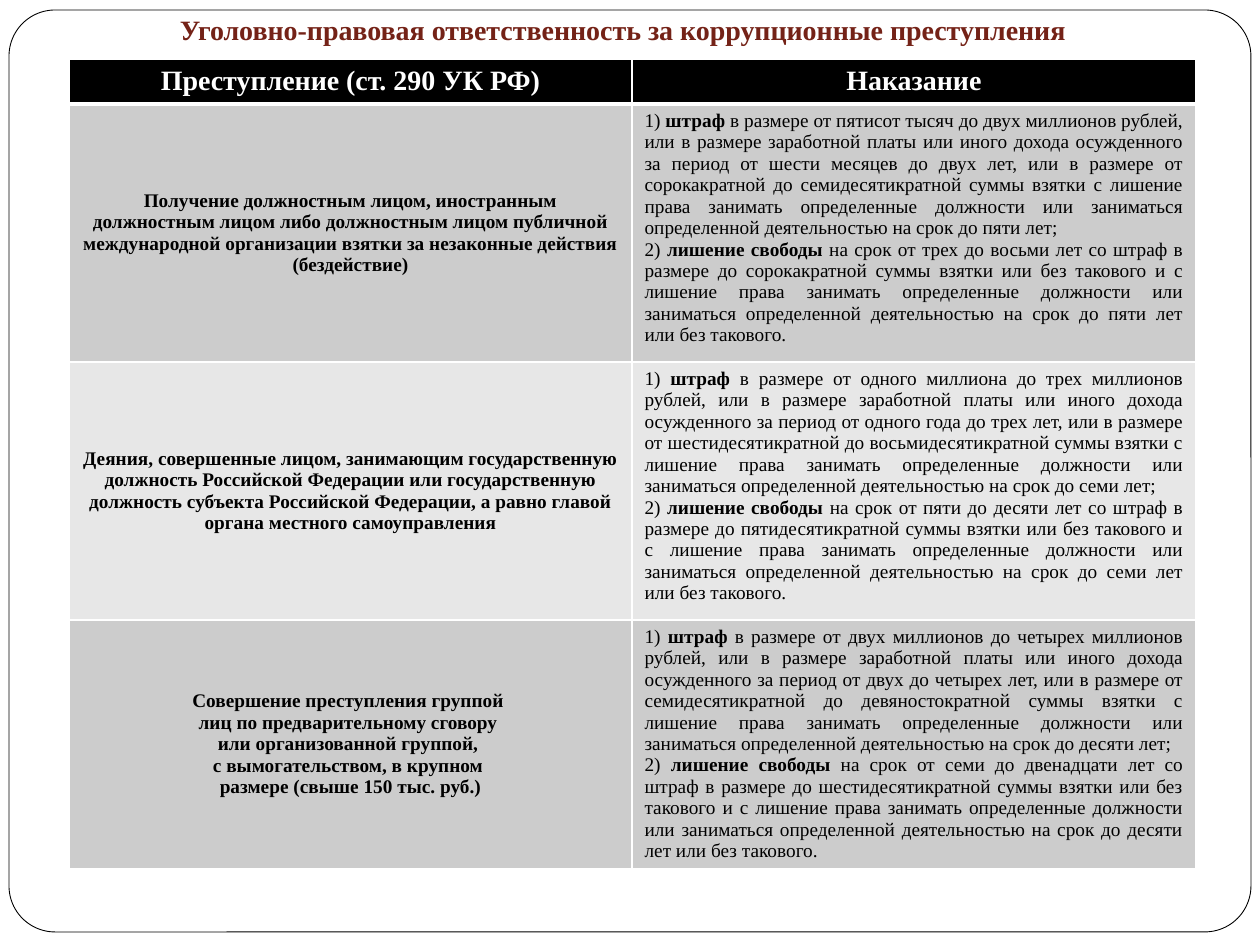
"""Build a slide with a table of bribery offences and their punishments."""
from dataclasses import dataclass

import lxml.etree
import pptx
import pptx.dml.color
import pptx.enum.shapes
import pptx.enum.text
import pptx.oxml.ns
import pptx.util

BLACK = pptx.dml.color.RGBColor(0x00, 0x00, 0x00)
WHITE = pptx.dml.color.RGBColor(0xFF, 0xFF, 0xFF)
MAROON = pptx.dml.color.RGBColor(0x74, 0x22, 0x17)
DARK = pptx.dml.color.RGBColor(0xCC, 0xCC, 0xCC)
LIGHT = pptx.dml.color.RGBColor(0xE7, 0xE7, 0xE7)
FONT = "Times New Roman"
SCALE = 914400 / 126
ALIGN = pptx.enum.text.PP_ALIGN
ANCHOR = pptx.enum.text.MSO_ANCHOR
TITLE = "Уголовно-правовая ответственность за коррупционные преступления"
HEADS = ["Преступление (ст. 290 УК РФ)", "Наказание"]
WIDTHS = [563, 564]
HEIGHTS = [45, 258, 258, 248]


@dataclass
class Crime:
    """An offence, its two punishments and how many are auto-numbered."""
    act: str
    fine: str
    jail: str
    auto: int
    fill: pptx.dml.color.RGBColor


CRIMES = [
    Crime(
        "Получение должностным лицом, иностранным должностным лицом либо должностным лицом "
        "публичной международной организации взятки за незаконные действия (бездействие)",
        " в размере от пятисот тысяч до двух миллионов рублей, или в размере заработной платы "
        "или иного дохода осужденного за период от шести месяцев до двух лет, или в размере от "
        "сорокакратной до семидесятикратной суммы взятки с лишение права занимать определенные "
        "должности или заниматься определенной деятельностью на срок до пяти лет; ",
        " на срок от трех до восьми лет со штраф в размере до сорокакратной суммы взятки или без "
        "такового и с лишение права занимать определенные должности или заниматься определенной "
        "деятельностью на срок до пяти лет или без такового.",
        1, DARK),
    Crime(
        "Деяния, совершенные лицом, занимающим государственную должность Российской Федерации "
        "или государственную должность субъекта Российской Федерации, а равно главой органа "
        "местного самоуправления",
        " в размере от одного миллиона до трех миллионов рублей, или в размере заработной платы "
        "или иного дохода осужденного за период от одного года до трех лет, или в размере от "
        "шестидесятикратной до восьмидесятикратной суммы взятки с лишение права занимать "
        "определенные должности или заниматься определенной деятельностью на срок до семи лет; ",
        " на срок от пяти до десяти лет со штраф в размере до пятидесятикратной суммы взятки или "
        "без такового и с лишение права занимать определенные должности или заниматься "
        "определенной деятельностью на срок до семи лет или без такового.",
        2, LIGHT),
    Crime(
        "Совершение преступления группой \nлиц по предварительному сговору \n"
        "или организованной группой, \nс вымогательством, в крупном \n"
        "размере (свыше 150 тыс. руб.)",
        " в размере от двух миллионов до четырех миллионов рублей, или в размере заработной платы "
        "или иного дохода осужденного за период от двух до четырех лет, или в размере от "
        "семидесятикратной до девяностократной суммы взятки с лишение права занимать определенные "
        "должности или заниматься определенной деятельностью на срок до десяти лет;",
        " на срок от семи до двенадцати лет со штраф в размере до шестидесятикратной суммы взятки "
        "или без такового и с лишение права занимать определенные должности или заниматься "
        "определенной деятельностью на срок до десяти лет или без такового.",
        0, DARK),
]


def px(size: int) -> int:
    """Turn pixels into EMU."""
    return round(size * SCALE)


def style(para, size: int, color, align, bold=None) -> None:
    """Set the font and alignment of a paragraph."""
    para.alignment = align
    para.font.name = FONT
    para.font.size = pptx.util.Pt(size)
    para.font.color.rgb = color
    para.font.bold = bold


def write(frame, text: str, size: int, color) -> None:
    """Fill a frame with one centred bold paragraph."""
    para = frame.paragraphs[0]
    para.text = text
    style(para, size, color, ALIGN.CENTER, True)


def number(para) -> None:
    """Number a paragraph as 1), 2) with no indent."""
    props = para._p.get_or_add_pPr()
    props.set("marL", "0")
    props.set("indent", "0")
    mark = lxml.etree.Element(pptx.oxml.ns.qn("a:buAutoNum"), type="arabicParenR")
    props.insert(0, mark)


def punish(frame, crime: Crime) -> None:
    """Write the two punishments with their key words in bold."""
    items = [("штраф", crime.fine), ("лишение свободы", crime.jail)]
    for i, (term, rest) in enumerate(items):
        para = frame.add_paragraph() if i else frame.paragraphs[0]
        auto = i < crime.auto
        if auto:
            number(para)
        style(para, 11, BLACK, ALIGN.JUSTIFY)
        lead = " " if auto else f"{i + 1}) "
        for text, bold in [(lead, False), (term, True), (rest, False)]:
            run = para.add_run()
            run.text = text
            run.font.bold = bold


def paint(cell, fill, top: int = 1, base: int = 1) -> None:
    """Set the fill and white borders of a cell."""
    cell.fill.solid()
    cell.fill.fore_color.rgb = fill
    props = cell._tc.get_or_add_tcPr()
    for i, (side, width) in enumerate([("L", 1), ("R", 1), ("T", top), ("B", base)]):
        line = lxml.etree.Element(pptx.oxml.ns.qn(f"a:ln{side}"), w=str(pptx.util.Pt(width)))
        solid = lxml.etree.SubElement(line, pptx.oxml.ns.qn("a:solidFill"))
        lxml.etree.SubElement(solid, pptx.oxml.ns.qn("a:srgbClr"), val=str(WHITE))
        props.insert(i, line)


def frame_page(slide) -> None:
    """Draw the rounded border of the page."""
    shape = slide.shapes.add_shape(
        pptx.enum.shapes.MSO_SHAPE.ROUNDED_RECTANGLE, px(9), px(10), px(1242), px(922))
    shape.adjustments[0] = 0.05
    shape.shadow.inherit = False
    shape.fill.solid()
    shape.fill.fore_color.rgb = WHITE
    shape.line.color.rgb = BLACK
    shape.line.width = pptx.util.Pt(0.5)


def add_title(slide) -> None:
    """Add the heading above the table."""
    frame = slide.shapes.add_textbox(px(59), px(20), px(1128), px(39)).text_frame
    frame.word_wrap = True
    frame.vertical_anchor = ANCHOR.BOTTOM
    frame.margin_bottom = pptx.util.Inches(0.1)
    write(frame, TITLE, 16, MAROON)


def add_grid(slide) -> None:
    """Add the table of crimes and punishments."""
    table = slide.shapes.add_table(
        len(HEIGHTS), len(WIDTHS), px(69), px(59), px(sum(WIDTHS)), px(sum(HEIGHTS))).table
    for col, width in zip(table.columns, WIDTHS):
        col.width = px(width)
    for row, height in zip(table.rows, HEIGHTS):
        row.height = px(height)
    for i, head in enumerate(HEADS):
        cell = table.cell(0, i)
        write(cell.text_frame, head, 16, WHITE)
        paint(cell, BLACK, base=3)
    for i, crime in enumerate(CRIMES, 1):
        left, right = table.cell(i, 0), table.cell(i, 1)
        left.vertical_anchor = ANCHOR.MIDDLE
        write(left.text_frame, crime.act, 11, BLACK)
        punish(right.text_frame, crime)
        for cell in (left, right):
            paint(cell, crime.fill, top=3 if i == 1 else 1)


def main() -> None:
    """Build and save the slide."""
    deck = pptx.Presentation()
    deck.slide_width, deck.slide_height = px(1260), px(945)
    slide = deck.slides.add_slide(deck.slide_layouts[6])
    frame_page(slide)
    add_grid(slide)
    add_title(slide)
    deck.save("out.pptx")


if __name__ == "__main__":
    main()
